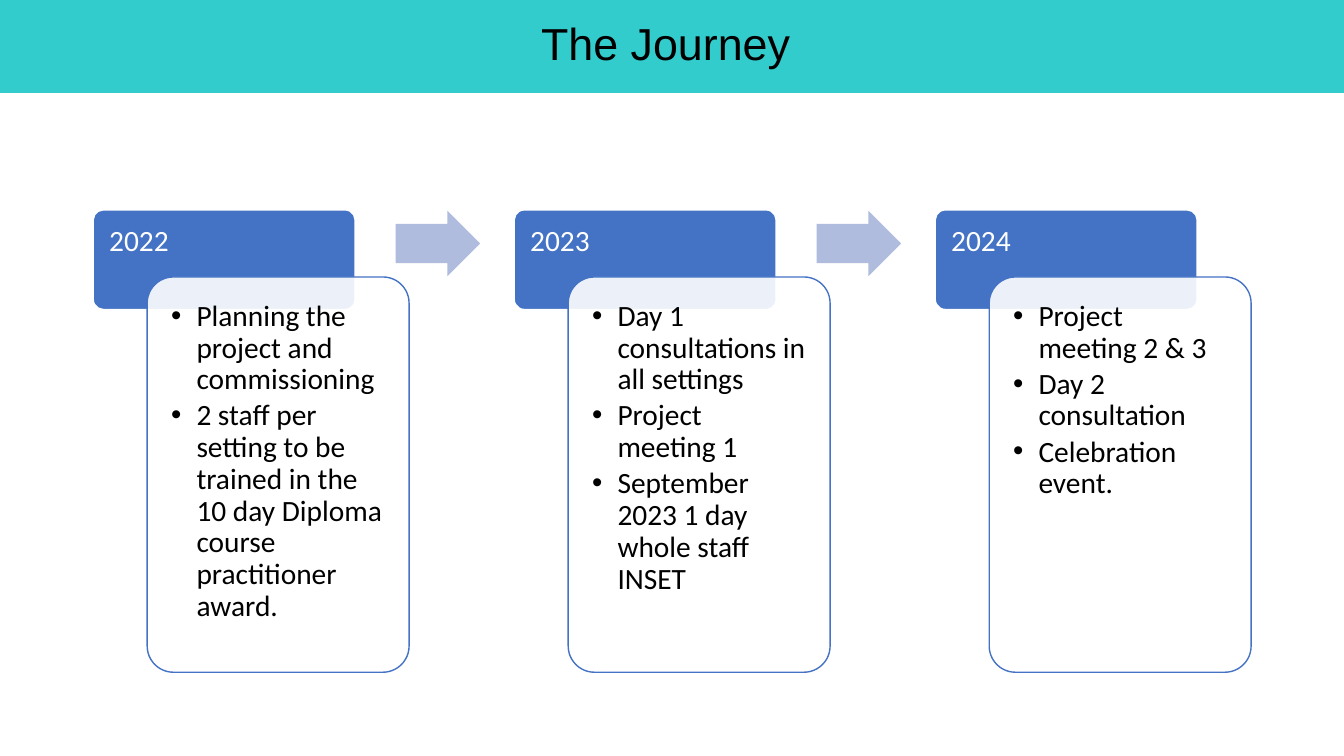
import pptx
import pptx.util
import pptx.dml.color
import pptx.enum.shapes
import pptx.enum.text
import pptx.oxml
import pptx.oxml.ns
import lxml.etree

Cm, Pt = pptx.util.Cm, pptx.util.Pt
SHAPE = pptx.enum.shapes.MSO_SHAPE
ANCHOR = pptx.enum.text.MSO_ANCHOR
ALIGN = pptx.enum.text.PP_ALIGN

COLORS = {
    "band": "33CCCC",
    "blue": "4472C4",
    "arrow": "B0BCDE",
    "white": "FFFFFF",
    "black": "000000",
}

STAGES = [
    ("2022", ["Planning the project and commissioning",
              "2 staff per setting to be trained in the 10 day Diploma "
              "course practitioner award."]),
    ("2023", ["Day 1 consultations in all settings",
              "Project meeting 1",
              "September 2023 1 day whole staff INSET"]),
    ("2024", ["Project meeting 2 & 3",
              "Day 2 consultation",
              "Celebration event."]),
]


def rgb(name):
    return pptx.dml.color.RGBColor.from_string(COLORS[name])


def add_box(s, kind, x, y, w, h, fill, line=None, adj=(), alpha=None):
    """Add a preset shape; lengths in centimetres, alpha in percent."""
    sp = s.shapes.add_shape(kind, Cm(x), Cm(y), Cm(w), Cm(h))
    sp.shadow.inherit = False
    for i, value in enumerate(adj):
        sp.adjustments[i] = value
    sp.fill.solid()
    sp.fill.fore_color.rgb = rgb(fill)
    if alpha is not None:
        clr = sp.fill._xPr.find(".//" + pptx.oxml.ns.qn("a:srgbClr"))
        lxml.etree.SubElement(clr, pptx.oxml.ns.qn("a:alpha"), val=str(alpha * 1000))
    if line:
        sp.line.color.rgb = rgb(line)
        sp.line.width = Pt(1)
    else:
        sp.line.fill.background()
    return sp


def set_text(sp, lines, size=21, font="Calibri", color="black", align=ALIGN.LEFT,
             anchor=ANCHOR.TOP, inset=0.41, after=0, bullet=False):
    tf = sp.text_frame
    tf.word_wrap = True
    tf.vertical_anchor = anchor
    tf.margin_left = tf.margin_right = tf.margin_top = tf.margin_bottom = Cm(inset)
    for i, text in enumerate(lines):
        p = tf.paragraphs[0] if i == 0 else tf.add_paragraph()
        p.alignment = align
        p.line_spacing = 0.9
        p.space_after = Pt(after)
        if bullet:
            pPr = p._p.get_or_add_pPr()
            pPr.set("marL", str(Cm(0.64)))
            pPr.set("indent", str(-Cm(0.64)))
            lxml.etree.SubElement(pPr, pptx.oxml.ns.qn("a:buFont"), typeface="Arial")
            lxml.etree.SubElement(pPr, pptx.oxml.ns.qn("a:buChar"), char="•")
        r = p.add_run()
        r.text = text
        r.font.size = Pt(size)
        r.font.name = font
        r.font.color.rgb = rgb(color)


def add_title_band(s, x, y, w, h):
    sp = add_box(s, SHAPE.RECTANGLE, x, y, w, h, "band")
    set_text(sp, ["The Journey "], size=32, font="Arial", align=ALIGN.CENTER,
             anchor=ANCHOR.MIDDLE, inset=0.13)


def add_stage(s, x, y, w, year, points):
    # Year header
    sp = add_box(s, SHAPE.ROUNDED_RECTANGLE, x, y, w, 2.51, "blue", "white", [0.1])
    set_text(sp, [year], color="white", inset=0.33, after=7.35)
    # Panel overlapping the header
    sp = add_box(s, SHAPE.ROUNDED_RECTANGLE, x + 1.36, y + 1.69, w, 9.96,
                 "white", "blue", [0.1], alpha=90)
    set_text(sp, points, after=3.15, bullet=True)


def add_timeline(s, x, y, w, pitch):
    for i, (year, points) in enumerate(STAGES):
        left = x + i * pitch
        add_stage(s, left, y, w, year, points)
        # Arrow to the next stage
        if i < len(STAGES) - 1:
            add_box(s, SHAPE.RIGHT_ARROW, left + w + 1.02, y + 0.02, 2.13, 1.65,
                    "arrow", adj=[0.6, 0.5])


def main():
    prs = pptx.Presentation()
    prs.slide_width, prs.slide_height = Cm(33.87), Cm(19.05)
    s = prs.slides.add_slide(prs.slide_layouts[6])
    add_title_band(s, 0, 0, 33.87, 2.34)
    add_timeline(s, 2.35, 5.29, 6.6, 10.61)
    prs.save("out.pptx")


if __name__ == "__main__":
    main()
